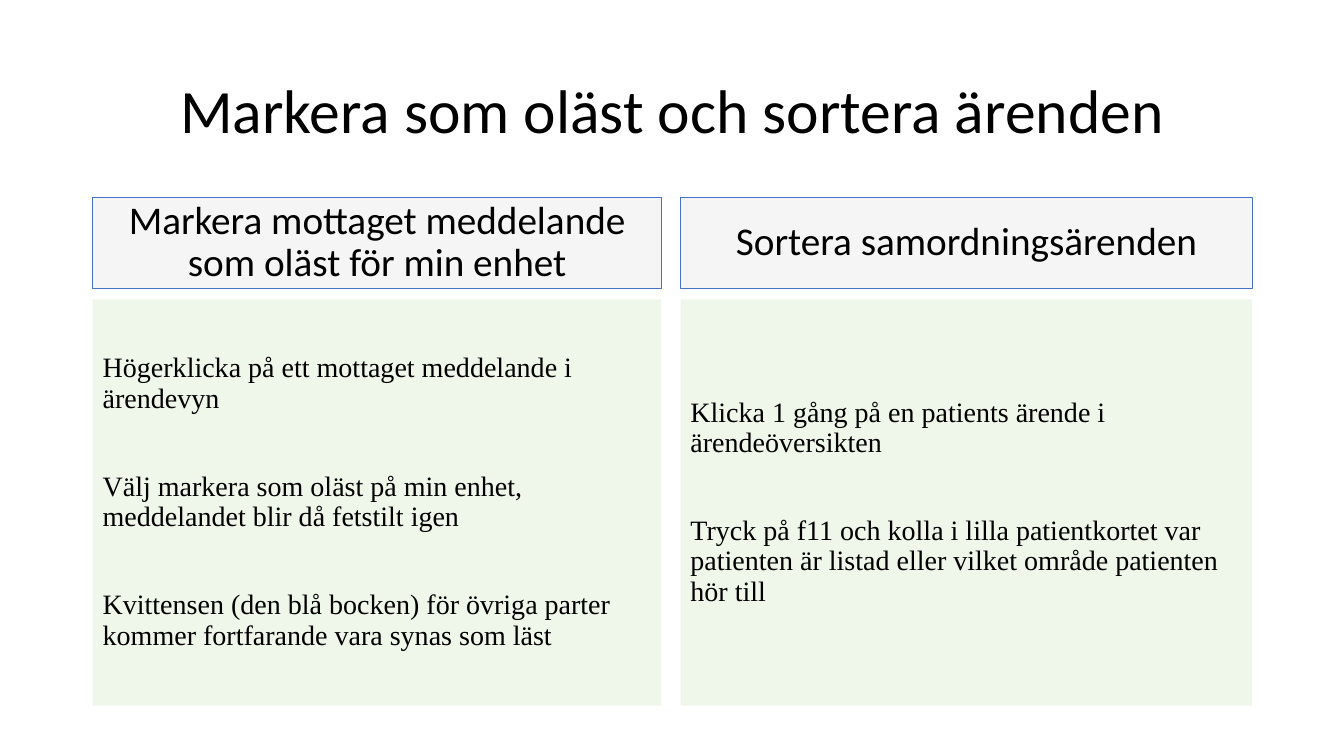
"""Build a slide with a title above two headed columns of instructions."""
from pptx import Presentation, util as u
from pptx.dml.color import RGBColor
from pptx.enum import shapes, text

TITLE = "Markera som oläst och sortera ärenden"
COLUMNS = [
    ("Markera mottaget meddelande som oläst för min enhet", [
        "Högerklicka på ett mottaget meddelande i ärendevyn",
        "Välj markera som oläst på min enhet, meddelandet blir då fetstilt igen",
        "Kvittensen (den blå bocken) för övriga parter kommer fortfarande vara synas som läst",
    ]),
    ("Sortera samordningsärenden", [
        "Klicka 1 gång på en patients ärende i ärendeöversikten",
        "Tryck på f11 och kolla i lilla patientkortet var patienten är listad "
        "eller vilket område patienten hör till",
    ]),
]

SLIDE_SIZE = (13.33, 7.5)
COLUMN_SPANS = [(0.92, 5.64), (6.75, 5.67)]
TITLE_BOX = (0.92, 0.4, 11.5, 1.45)
HEADING_ROW = (1.96, 0.9)
STEPS_ROW = (2.97, 4.03)

CENTER, LEFT = text.PP_ALIGN.CENTER, text.PP_ALIGN.LEFT
THEME = {
    "ink": "000000",
    "title": {"font": "Calibri", "size": 44, "align": CENTER, "before": 0, "gap": 0},
    "heading": {"font": "Calibri", "size": 28, "align": CENTER, "before": 10, "gap": 0,
                "fill": "F5F5F5", "line": "4472C4"},
    "steps": {"font": "Times New Roman", "size": 20, "align": LEFT, "before": 10, "gap": 41.5,
              "fill": "EFF6EA"},
}


def apply(target, values):
    for name, value in values.items():
        setattr(target, name, value)


def add_panel(slide, box, paragraphs, style):
    shape = slide.shapes.add_shape(shapes.MSO_SHAPE.RECTANGLE, *map(u.Inches, box))
    shape.shadow.inherit = False
    if "fill" in style:
        shape.fill.solid()
        shape.fill.fore_color.rgb = RGBColor.from_string(style["fill"])
    else:
        shape.fill.background()
    if "line" in style:
        shape.line.color.rgb = RGBColor.from_string(style["line"])
        shape.line.width = u.Pt(0.75)
    else:
        shape.line.fill.background()
    write(shape.text_frame, paragraphs, style)


def write(frame, paragraphs, style):
    apply(frame, {"word_wrap": True, "vertical_anchor": text.MSO_ANCHOR.MIDDLE})
    for index, wording in enumerate(paragraphs):
        paragraph = frame.add_paragraph() if index else frame.paragraphs[0]
        before = style["gap"] if index else style["before"]
        apply(paragraph, {"alignment": style["align"], "line_spacing": 0.9,
                          "space_before": u.Pt(before)})
        run = paragraph.add_run()
        run.text = wording
        apply(run.font, {"name": style["font"], "size": u.Pt(style["size"])})
        run.font.color.rgb = RGBColor.from_string(THEME["ink"])


def main():
    presentation = Presentation()
    width, height = map(u.Inches, SLIDE_SIZE)
    apply(presentation, {"slide_width": width, "slide_height": height})
    slide = presentation.slides.add_slide(presentation.slide_layouts[6])
    title = slide.shapes.add_textbox(*map(u.Inches, TITLE_BOX))
    write(title.text_frame, [TITLE], THEME["title"])
    for (left, span), (heading, steps) in zip(COLUMN_SPANS, COLUMNS):
        rows = [(HEADING_ROW, [heading], "heading"), (STEPS_ROW, steps, "steps")]
        for (top, depth), paragraphs, role in rows:
            add_panel(slide, (left, top, span, depth), paragraphs, THEME[role])
    presentation.save("out.pptx")


if __name__ == "__main__":
    main()
